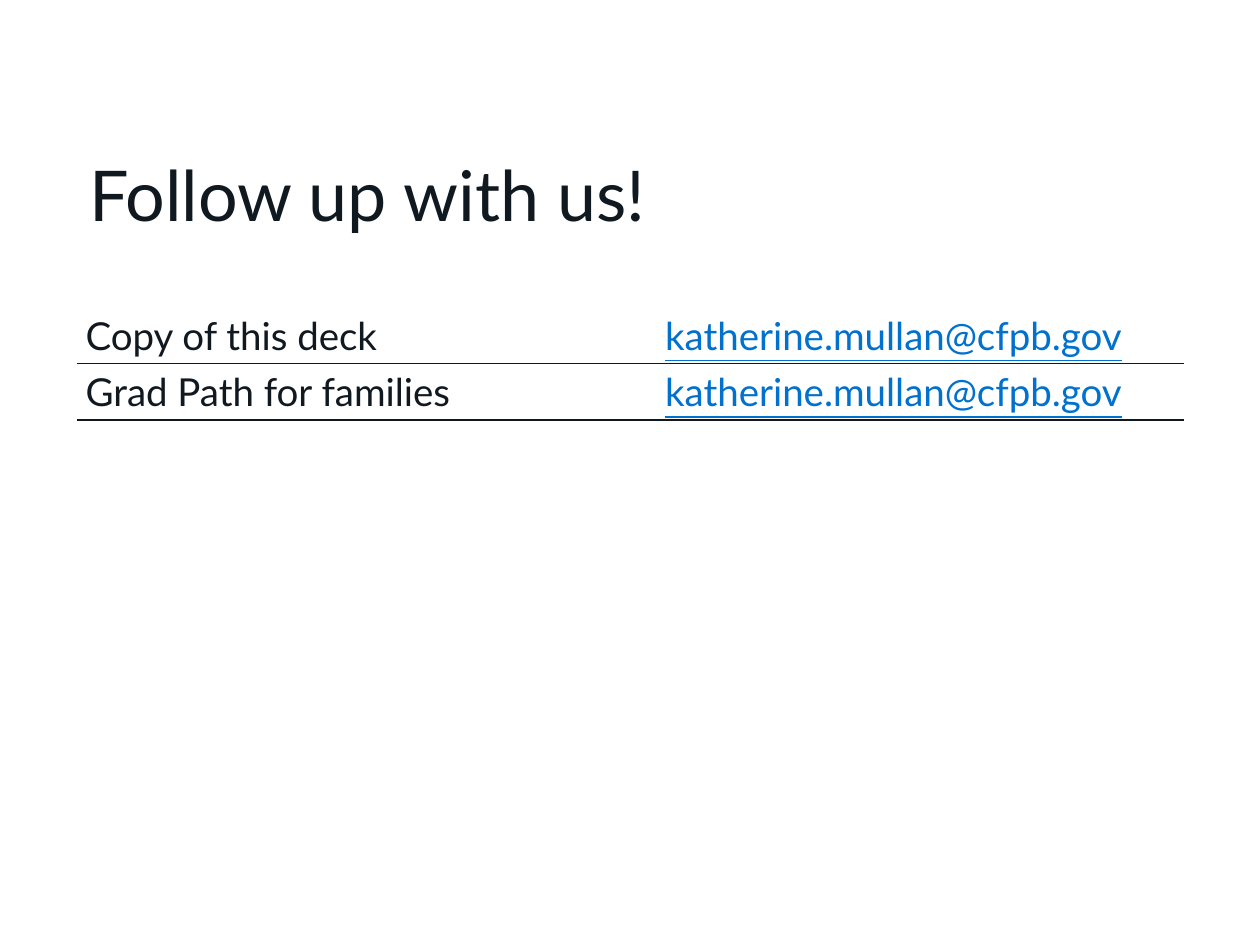
from lxml import etree
from pptx import Presentation, util as u
from pptx.dml.color import RGBColor
from pptx.enum import text
from pptx.oxml.ns import qn

FONT = "Lato"
INK, LINK, PAPER = "101820", "0071CE", "FFFFFF"
WIDTH, HEIGHT = u.Inches(10), u.Inches(7.5)
LEFT, CONTENT_WIDTH = 0.061, 0.879  # shares of the slide width
CONTACTS = [
    ("Copy of this deck", "katherine.mullan@cfpb.gov"),
    ("Grad Path for families", "katherine.mullan@cfpb.gov"),
]


def color(value):
    return RGBColor.from_string(value)


def write(frame, words, size=22, ink=INK, underline=False):
    run = frame.paragraphs[0].add_run()
    run.text = words
    run.font.name = FONT
    run.font.size = u.Pt(size)
    run.font.color.rgb = color(ink)
    run.font.underline = underline


def set_border(cell, side, ink=None, points=1):
    """Draw one side (L, R, T or B) of a cell, or hide it if ink is None."""
    line = etree.SubElement(cell._tc.get_or_add_tcPr(), qn(f"a:ln{side}"))
    line.set("w", str(u.Pt(points)))
    if ink is None:
        etree.SubElement(line, qn("a:noFill"))
    else:
        fill = etree.SubElement(line, qn("a:solidFill"))
        etree.SubElement(fill, qn("a:srgbClr")).set("val", ink)


def add_title(slide, left, top, width, height, words):
    frame = slide.shapes.add_textbox(left, top, width, height).text_frame
    frame.word_wrap = True
    frame.vertical_anchor = text.MSO_ANCHOR.TOP
    write(frame, words, size=40)


def add_contacts(slide, left, top, width, height, contacts):
    table = slide.shapes.add_table(len(contacts), 2, left, top, width, height).table
    table.first_row = table.horz_banding = False
    table.columns[0].width = u.Inches(4.6)
    table.columns[1].width = width - table.columns[0].width
    for row, contact in enumerate(contacts):
        for column, words in enumerate(contact):
            cell = table.cell(row, column)
            cell.margin_left = cell.margin_right = u.Inches(0.07)
            cell.margin_top = cell.margin_bottom = u.Inches(0.04)
            cell.vertical_anchor = text.MSO_ANCHOR.MIDDLE
            is_address = column == 1
            write(cell.text_frame, words, ink=LINK if is_address else INK,
                  underline=is_address)
            for side in "LR":
                set_border(cell, side)
            set_border(cell, "T", INK if row else None)
            set_border(cell, "B", INK)
            cell.fill.background()


def main():
    presentation = Presentation()
    presentation.slide_width, presentation.slide_height = WIDTH, HEIGHT
    slide = presentation.slides.add_slide(presentation.slide_layouts[6])
    slide.background.fill.solid()
    slide.background.fill.fore_color.rgb = color(PAPER)

    left, width = int(WIDTH * LEFT), int(WIDTH * CONTENT_WIDTH)
    add_title(slide, left, u.Inches(1.15), width, u.Inches(4.07),
              "Follow up with us!")
    add_contacts(slide, left, u.Inches(2.44), width, u.Inches(0.88), CONTACTS)
    presentation.save("out.pptx")


if __name__ == "__main__":
    main()
